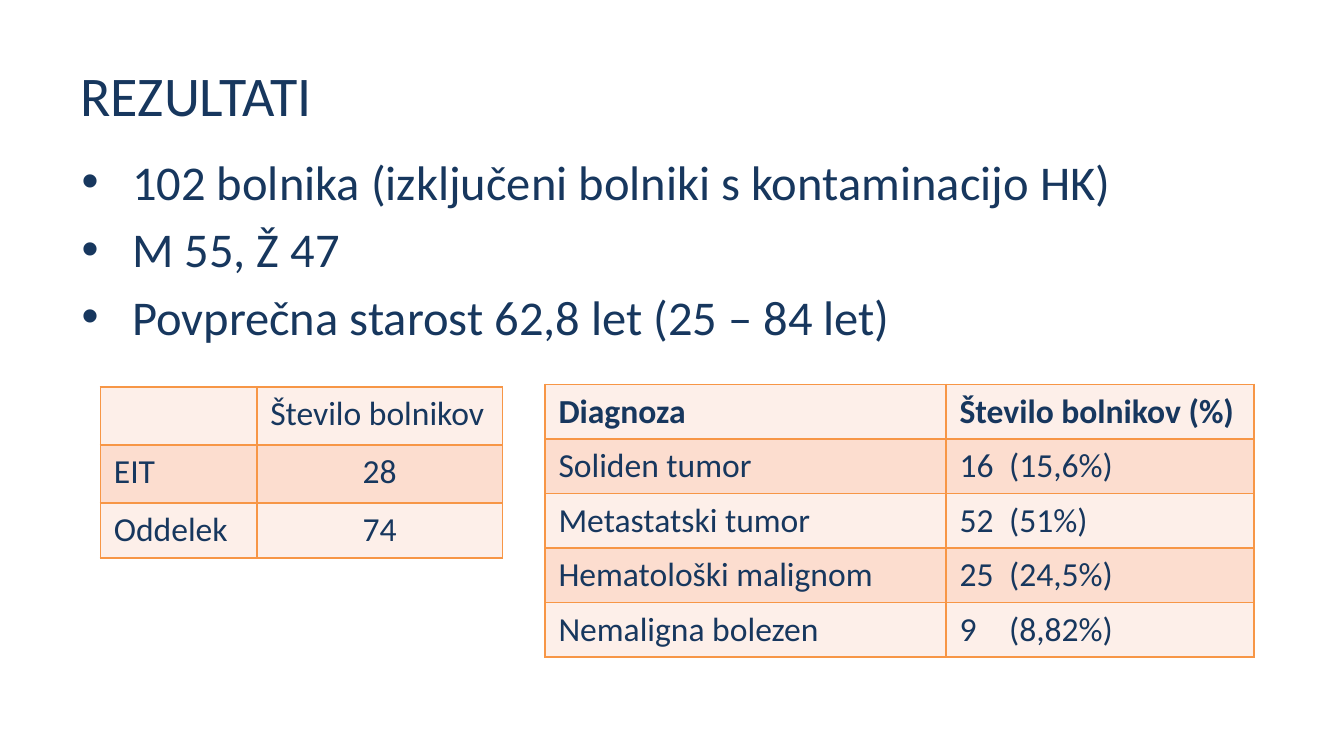
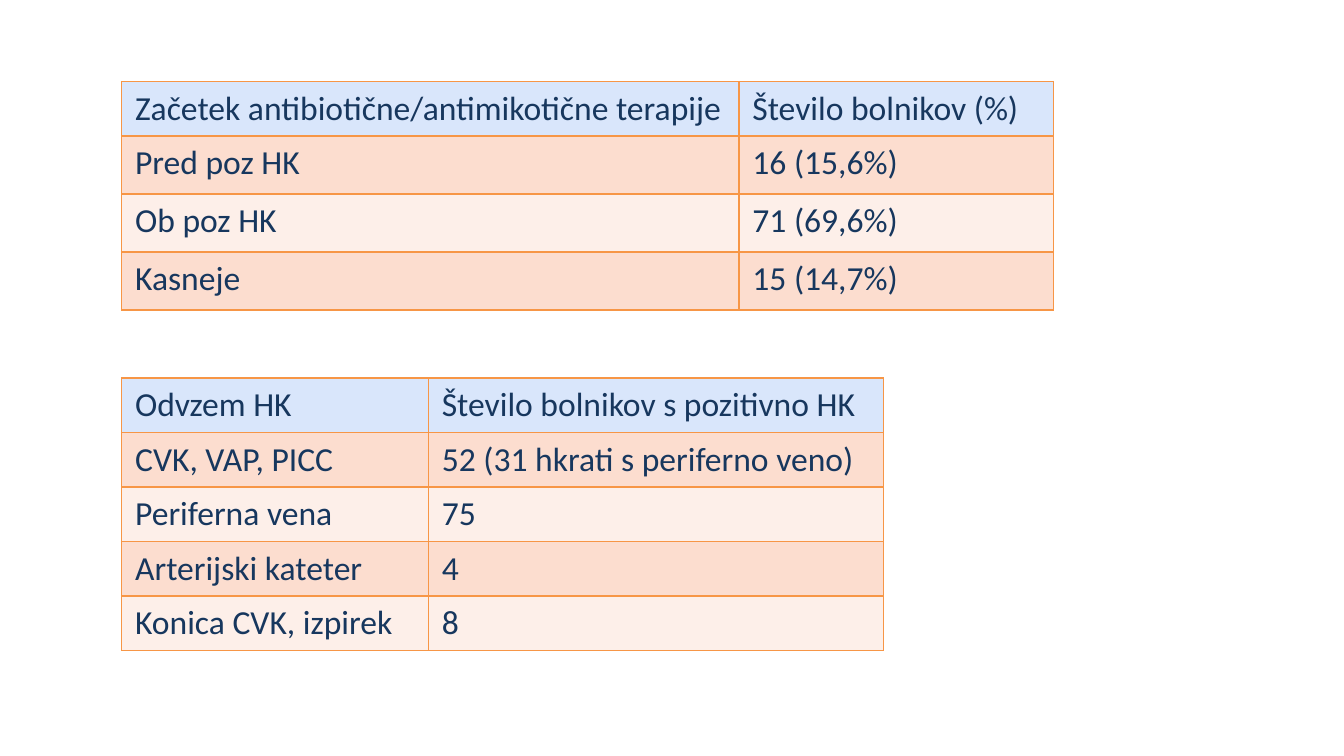
"""Build the two result slides with a title, key figures and four patient tables."""
from dataclasses import dataclass
from typing import Any, Optional

from lxml.etree import SubElement
from pptx import Presentation
from pptx.dml.color import RGBColor
from pptx.enum.text import MSO_ANCHOR, PP_ALIGN
from pptx.oxml import parse_xml
from pptx.oxml.ns import nsdecls, qn
from pptx.slide import Slide
from pptx.table import _Cell
from pptx.text.text import TextFrame, _Paragraph
from pptx.util import Pt

COLORS = {
    "ink": "17375E",
    "border": "F79646",
    "light_band": "FDEFE9",
    "dark_band": "FCDDCF",
    "blue_header": "D9E6FB",
}
FONT = {"name": "Calibri", "bold": False}
TITLE_FONT = {**FONT, "size": Pt(30)}
FIGURES_FONT = {**FONT, "size": Pt(26)}
CELL_FONT = {**FONT, "size": Pt(18)}
BOX_FORMAT = {"word_wrap": True}
FIGURE_FORMAT = {"space_before": Pt(5)}
PLAIN_TABLE = {"first_row": False, "horz_banding": False}
BULLET_INDENT = Pt(27)
LOW_ROW, TALL_ROW = 29.2, 31.1


@dataclass(frozen=True)
class PatientTable:
    left: float
    top: float
    columns: tuple[float, ...]
    heights: tuple[float, ...]
    rows: tuple[tuple[str, ...], ...]
    header_color: str = "light_band"
    header_bold: bool = False
    value_align: Optional[PP_ALIGN] = None
    percent_stop: Optional[float] = None


@dataclass(frozen=True)
class TextArea:
    left: float
    top: float
    width: float
    height: float
    anchor: MSO_ANCHOR


TITLE_AREA = TextArea(36, 16.6, 648, 67.7, MSO_ANCHOR.MIDDLE)
FIGURES_AREA = TextArea(36.7, 77.8, 648, 290, MSO_ANCHOR.TOP)

KEY_FIGURES = (
    "102 bolnika (izključeni bolniki s kontaminacijo HK)",
    "M 55, Ž 47",
    "Povprečna starost 62,8 let (25 – 84 let)",
)
WARDS = PatientTable(
    53.8, 207.4, (83.8, 131.7), (TALL_ROW, TALL_ROW, LOW_ROW),
    (("", "Število bolnikov"), ("EIT", "28"), ("Oddelek", "74")),
    value_align=PP_ALIGN.CENTER,
)
DIAGNOSES = PatientTable(
    292, 206, (214.9, 165), (LOW_ROW,) * 5,
    (
        ("Diagnoza", "Število bolnikov (%)"),
        ("Soliden tumor", "16\t(15,6%)"),
        ("Metastatski tumor", "52\t(51%)"),
        ("Hematološki malignom", "25\t(24,5%)"),
        ("Nemaligna bolezen", "9\t(8,82%)"),
    ),
    header_bold=True, percent_stop=26.5,
)
THERAPY_START = PatientTable(
    65.2, 43.7, (330.7, 168.4), (LOW_ROW,) + (TALL_ROW,) * 3,
    (
        ("Začetek antibiotične/antimikotične terapije", "Število bolnikov (%)"),
        ("Pred poz HK", "16 (15,6%)"),
        ("Ob poz HK", "71 (69,6%)"),
        ("Kasneje", "15 (14,7%)"),
    ),
    header_color="blue_header",
)
SAMPLING = PatientTable(
    65.2, 202.5, (164.3, 243.8), (LOW_ROW,) * 5,
    (
        ("Odvzem HK", "Število bolnikov s pozitivno HK"),
        ("CVK, VAP, PICC", "52 (31 hkrati s periferno veno)"),
        ("Periferna vena", "75"),
        ("Arterijski kateter", "4"),
        ("Konica CVK, izpirek", "8"),
    ),
    header_color="blue_header",
)


def apply_format(target: Any, values: dict[str, Any]) -> None:
    """Set every named attribute on the target."""
    for attribute, value in values.items():
        setattr(target, attribute, value)


def write(paragraph: _Paragraph, wording: str, font: dict[str, Any]) -> None:
    """Add styled wording to a paragraph."""
    run = paragraph.add_run()
    run.text = wording
    apply_format(run.font, font)
    run.font.color.rgb = RGBColor.from_string(COLORS["ink"])


def add_area(slide: Slide, area: TextArea) -> TextFrame:
    """Add a wrapping text area and return its frame."""
    bounds = map(Pt, (area.left, area.top, area.width, area.height))
    frame = slide.shapes.add_textbox(*bounds).text_frame
    apply_format(frame, {**BOX_FORMAT, "vertical_anchor": area.anchor})
    return frame


def add_key_figures(slide: Slide, figures: tuple[str, ...]) -> None:
    """Add the bulleted list of figures."""
    frame = add_area(slide, FIGURES_AREA)
    for index, figure in enumerate(figures):
        paragraph = frame.add_paragraph() if index else frame.paragraphs[0]
        apply_format(paragraph, FIGURE_FORMAT)
        write(paragraph, figure, FIGURES_FONT)
        properties = paragraph._p.get_or_add_pPr()
        properties.set("marL", str(BULLET_INDENT))
        properties.set("indent", str(-BULLET_INDENT))
        SubElement(properties, qn("a:buFont")).set("typeface", "Arial")
        SubElement(properties, qn("a:buChar")).set("char", "•")


def paint_cell(cell: _Cell, color: str) -> None:
    """Fill a cell and outline its four sides."""
    cell.fill.solid()
    cell.fill.fore_color.rgb = RGBColor.from_string(COLORS[color])
    properties = cell._tc.get_or_add_tcPr()
    for position, side in enumerate(("lnL", "lnR", "lnT", "lnB")):
        border = parse_xml(
            f'<a:{side} {nsdecls("a")} w="{Pt(1)}"><a:solidFill>'
            f'<a:srgbClr val="{COLORS["border"]}"/></a:solidFill></a:{side}>'
        )
        properties.insert(position, border)


def add_tab_stop(paragraph: _Paragraph, position: float) -> None:
    """Add a left tab stop to a paragraph."""
    stops = SubElement(paragraph._p.get_or_add_pPr(), qn("a:tabLst"))
    stop = SubElement(stops, qn("a:tab"))
    stop.set("pos", str(Pt(position)))
    stop.set("algn", "l")


def add_patient_table(slide: Slide, content: PatientTable) -> None:
    """Add a banded table of patient counts."""
    bounds = (content.left, content.top, sum(content.columns), sum(content.heights))
    table = slide.shapes.add_table(
        len(content.rows), len(content.columns), *map(Pt, bounds)
    ).table
    apply_format(table, PLAIN_TABLE)
    for column, width in zip(table.columns, content.columns):
        column.width = Pt(width)
    for row_index, (entries, height) in enumerate(zip(content.rows, content.heights)):
        table.rows[row_index].height = Pt(height)
        band = "dark_band" if row_index % 2 else "light_band"
        color = band if row_index else content.header_color
        font = {**CELL_FONT, "bold": content.header_bold and row_index == 0}
        for column_index, entry in enumerate(entries):
            cell = table.cell(row_index, column_index)
            paint_cell(cell, color)
            paragraph = cell.text_frame.paragraphs[0]
            if entry:
                write(paragraph, entry, font)
            if row_index and column_index:
                paragraph.alignment = content.value_align
                if content.percent_stop:
                    add_tab_stop(paragraph, content.percent_stop)


def main() -> None:
    """Build and save the presentation."""
    presentation = Presentation()
    apply_format(presentation, {"slide_width": Pt(720), "slide_height": Pt(405)})
    blank = presentation.slide_layouts[6]
    results, treatment = (presentation.slides.add_slide(blank) for _ in range(2))
    write(add_area(results, TITLE_AREA).paragraphs[0], "REZULTATI", TITLE_FONT)
    add_key_figures(results, KEY_FIGURES)
    for slide, tables in (
        (results, (WARDS, DIAGNOSES)),
        (treatment, (THERAPY_START, SAMPLING)),
    ):
        for content in tables:
            add_patient_table(slide, content)
    presentation.save("out.pptx")


if __name__ == "__main__":
    main()
